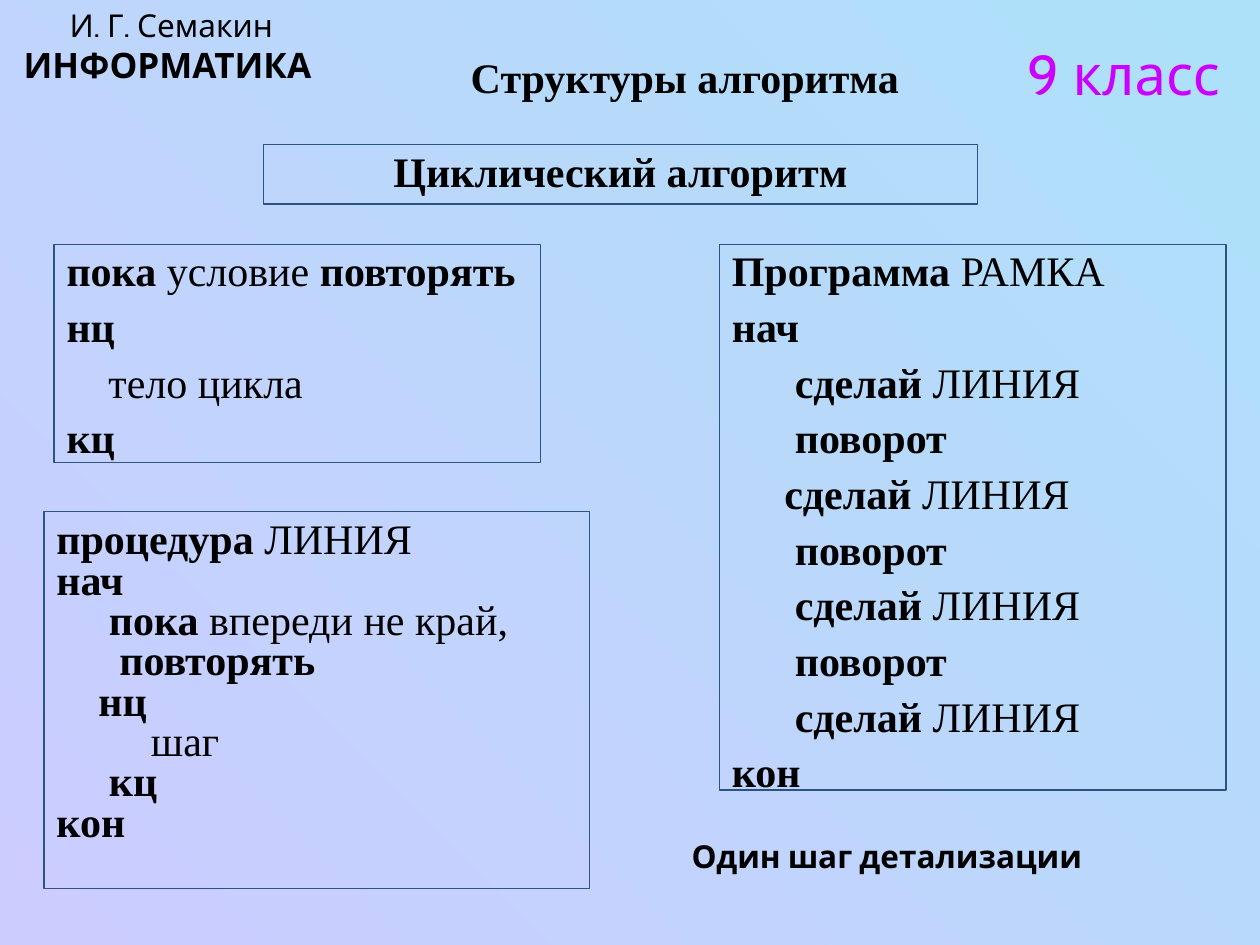
from dataclasses import dataclass
from pptx import Presentation
from pptx import util as u
from pptx.dml.color import RGBColor
from pptx.enum import shapes, text

WIDE, HIGH = 10, 7.5
MID = text.PP_ALIGN.CENTER
LEFT = text.PP_ALIGN.LEFT


@dataclass(frozen=True)
class Theme:
    serif: str = "Times New Roman"
    sans: str = "Cabin"
    ink: str = "000000"
    edge: str = "2B5481"
    grade: str = "CC00FF"
    low: str = "CCCCFF"
    high: str = "ADE1F9"
    code: int = 24
    note: int = 18
    name: int = 20
    large: int = 32
    gap: float = 5.9
    line: float = 0.75


T = Theme()


def place(left, top, width, height):
    sides = ((left, WIDE), (top, HIGH), (width, WIDE), (height, HIGH))
    return [u.Inches(share * size / 100) for share, size in sides]


def add_run(para, words, bold, size=T.code, face=T.serif, ink=T.ink):
    run = para.add_run()
    run.text = words
    font = run.font
    font.size, font.name, font.bold = u.Pt(size), face, bool(bold)
    font.color.rgb = RGBColor.from_string(ink)


def add_para(frame, first, align=LEFT):
    para = frame.paragraphs[0] if first else frame.add_paragraph()
    para.alignment = align
    return para


def add_label(slide, area, lines, align=MID, anchor=text.MSO_ANCHOR.TOP):
    frame = slide.shapes.add_textbox(*place(*area)).text_frame
    frame.word_wrap = True
    frame.vertical_anchor = anchor
    for row, (words, bold, style) in enumerate(lines):
        add_run(add_para(frame, row == 0, align), words, bold, **style)
    return frame


def add_box(slide, area, lines, hang=0.5, align=LEFT, tight=False):
    box = slide.shapes.add_shape(shapes.MSO_SHAPE.RECTANGLE, *place(*area))
    box.shadow.inherit = False
    box.fill.background()
    box.line.color.rgb = RGBColor.from_string(T.edge)
    box.line.width = u.Pt(T.line)
    frame = box.text_frame
    frame.word_wrap = True
    frame.vertical_anchor = text.MSO_ANCHOR.TOP
    step = u.Pt(T.code / 4)
    for row, (depth, *runs) in enumerate(lines):
        para = add_para(frame, row == 0, align)
        dense = tight and row > 0
        para.line_spacing = 0.8 if dense else 0.9
        para.space_before = u.Pt(0 if dense else T.gap)
        props = para._p.get_or_add_pPr()
        props.set("marL", str(u.Inches(hang)))
        props.set("indent", str(depth * step - u.Inches(hang)))
        for words, bold in runs:
            add_run(para, words, bold)


def paint(slide):
    fill = slide.background.fill
    fill.gradient()
    fill.gradient_angle = 45
    for stop, tint in zip(fill.gradient_stops, (T.low, T.high)):
        stop.color.rgb = RGBColor.from_string(tint)


def add_heads(slide):
    title = add_label(slide, (32.7, 5.87, 43.3, 5.2),
                      [("Структуры алгоритма", 1, {})])
    title.paragraphs[0].line_spacing = 0.8
    add_label(slide, (78.4, 3.73, 21.6, 8),
              [("9 класс", 0, dict(size=T.large, face=T.sans, ink=T.grade))],
              anchor=text.MSO_ANCHOR.MIDDLE)
    add_label(slide, (0, 0, 27.2, 9.73),
              [("И. Г. Семакин", 0, dict(size=T.note, face=T.sans)),
               ("ИНФОРМАТИКА ", 1, dict(size=T.name, face=T.sans))])
    add_label(slide, (53.9, 87.87, 42.5, 5.33),
              [("Один шаг детализации", 1, dict(size=T.note, face=T.sans))],
              align=LEFT)


def add_code(slide):
    add_box(slide, (20.9, 15.33, 56.7, 6.27),
            [(0, ("Циклический алгоритм", 1))], 0, MID)
    add_box(slide, (4.3, 25.87, 38.6, 23.07), [
        (0, ("пока", 1), (" условие ", 0), ("повторять", 1)),
        (0, ("нц", 1)),
        (4, ("тело цикла", 0)),
        (0, ("кц", 1)),
    ], 0.38)
    turn = (6, ("поворот", 1))
    draw = [(depth, ("сделай ", 1), ("ЛИНИЯ", 0)) for depth in (6, 5, 6, 6)]
    sides = [line for side in draw for line in (side, turn)][:-1]
    add_box(slide, (57.1, 25.87, 40.2, 57.73), [
        (0, ("Программа ", 1), ("РАМКА", 0)),
        (0, ("нач", 1)),
        *sides,
        (0, ("кон", 1)),
    ])
    add_box(slide, (3.5, 54.13, 43.3, 39.87), [
        (0, ("процедура ", 1), ("ЛИНИЯ", 0)),
        (0, ("нач", 1)),
        (5, ("пока ", 1), ("впереди не край,", 0), (" повторять", 1)),
        (4, ("нц", 1)),
        (9, ("шаг", 0)),
        (5, ("кц", 1)),
        (0, ("кон", 1)),
    ], tight=True)


def main():
    deck = Presentation()
    deck.slide_width, deck.slide_height = u.Inches(WIDE), u.Inches(HIGH)
    slide = deck.slides.add_slide(deck.slide_layouts[6])
    paint(slide)
    add_heads(slide)
    add_code(slide)
    deck.save("out.pptx")


if __name__ == "__main__":
    main()
